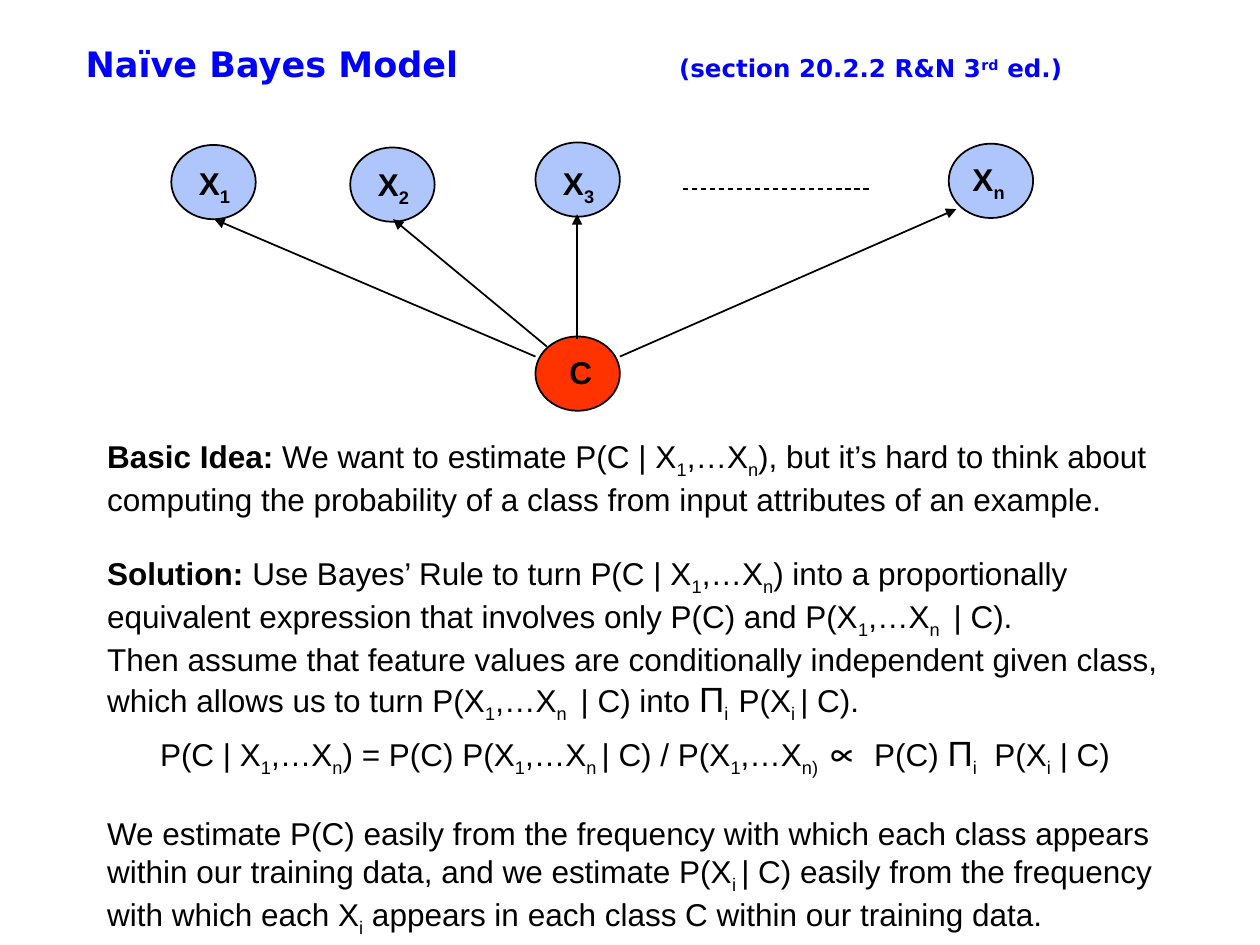
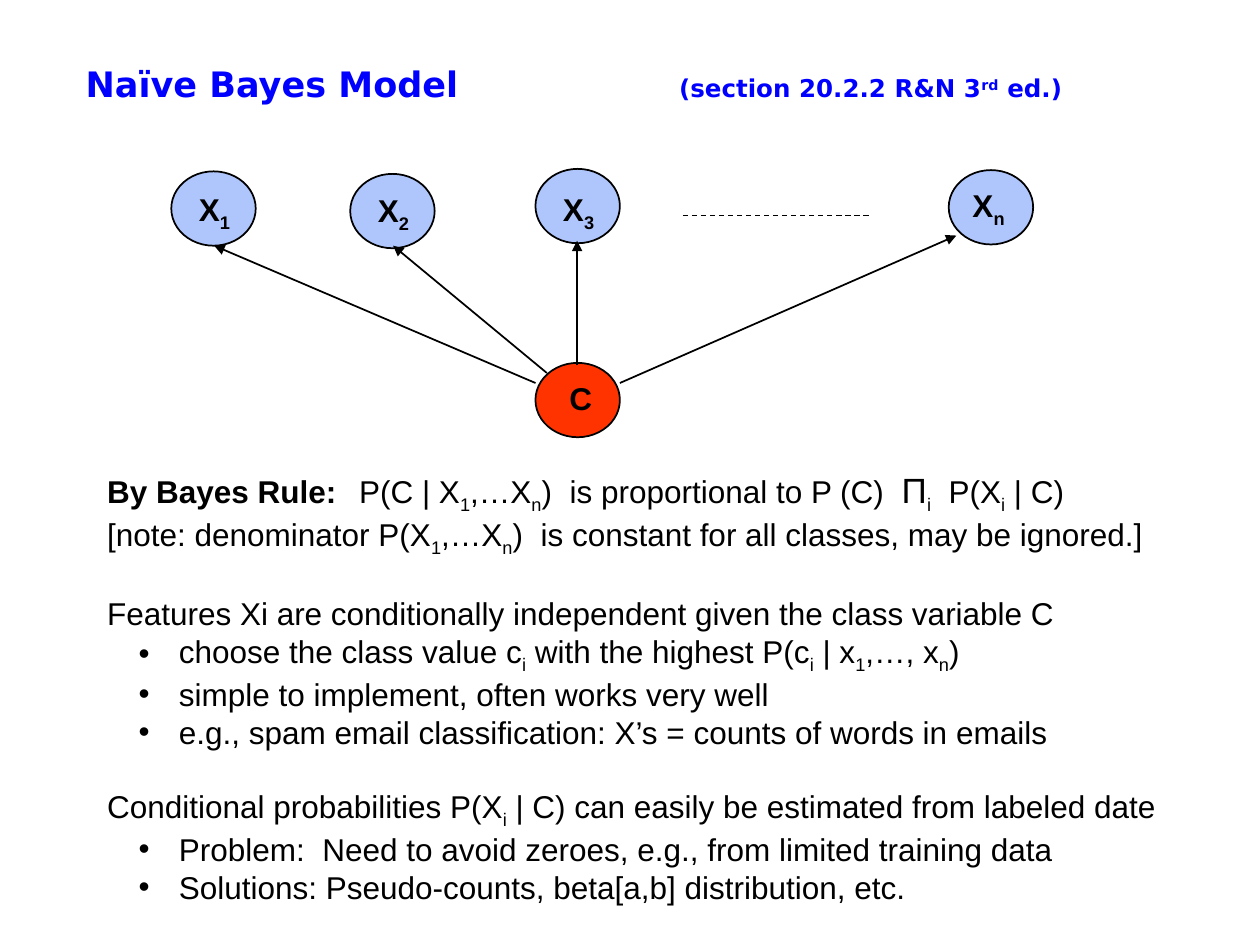
"""Build two slides that explain the naïve Bayes model."""
import itertools
from dataclasses import dataclass
from typing import Optional

import pptx
import pptx.dml.color
import pptx.enum.dml
import pptx.enum.shapes
import pptx.enum.text
import pptx.oxml
import pptx.oxml.ns
import pptx.util
from pptx.util import Inches, Pt

COLORS = {"title": "0000FF", "text": "000000", "class": "FF3300", "feature": "618FFD"}
TITLE_FONT, BODY_FONT = "DejaVu Sans", "Arial"
SYMBOL_SIZES = {"Π": 20, "∝": 24}
TEXT_SIZE = 18
BLANK_LINE = 20.7
NODE_W, NODE_H = 0.67, 0.59
SUBSCRIPT, SUPERSCRIPT = -25, 30


@dataclass(frozen=True)
class Node:
    letter: str
    left: float
    top: float
    label_left: float
    label_top: float
    kind: str = "feature"


@dataclass(frozen=True)
class Link:
    x1: float
    y1: float
    x2: float
    y2: float
    width: float = 1
    arrow: bool = True


@dataclass(frozen=True)
class Para:
    text: str
    lead: str = ""
    gap: bool = False
    bullet: bool = False
    indent: float = 0
    tab: Optional[float] = None


@dataclass(frozen=True)
class Page:
    title_top: float
    diagram_shift: float
    body_top: float
    body_height: float
    paras: tuple[Para, ...]


NODES = (
    Node("C", 4.25, 2.67, 4.42, 2.75, "class"),
    Node("X{n}", 7.53, 1.14, 7.62, 1.22),
    Node("X{1}", 1.36, 1.15, 1.48, 1.25),
    Node("X{2}", 2.78, 1.17, 2.9, 1.26),
    Node("X{3}", 4.25, 1.13, 4.37, 1.25),
)
LINKS = (
    Link(4.25, 2.83, 1.7, 1.74),
    Link(4.34, 2.75, 3.12, 1.74),
    Link(4.58, 2.69, 4.58, 1.7),
    Link(4.92, 2.83, 7.59, 1.66),
    Link(5.42, 1.5, 6.92, 1.5, 0.75, False),
)
PAGES = (
    Page(0.17, 0, 3.42, 3.87, (
        Para("We want to estimate P(C | X{1},…X{n}), but it’s hard to think about computing "
             "the probability of a class from input attributes of an example.", "Basic Idea: "),
        Para("Use Bayes’ Rule to turn P(C | X{1},…X{n}) into a proportionally equivalent "
             "expression that involves only P(C) and P(X{1},…X{n } | C).", "Solution: ", gap=True),
        Para("Then assume that feature values are conditionally independent given class, "
             "which allows us to turn P(X{1},…X{n } | C) into Π{i  }P(X{i }| C)."),
        Para("P(C | X{1},…X{n}) = P(C) P(X{1},…X{n }| C) / P(X{1},…X{n) }∝ P(C) Π{i}  P(X{i} | C)",
             indent=0.42),
        Para("We estimate P(C) easily from the frequency with which each class appears within "
             "our training data, and we estimate P(X{i }| C) easily from the frequency with "
             "which each X{i} appears in each class C within our training data.", gap=True),
    )),
    Page(0.33, 0.21, 3.67, 3.47, (
        Para("\tP(C | X{1},…X{n})  is proportional to P (C)  Π{i}  P(X{i} | C)",
             "By Bayes Rule:", tab=2.1),
        Para("[note: denominator P(X{1},…X{n})  is constant for all classes, may be ignored.]"),
        Para("Features Xi are conditionally independent given the class variable C", gap=True),
        Para("choose the class value c{i} with the highest P(c{i} | x{1},…, x{n})", bullet=True),
        Para("simple to implement, often works very well", bullet=True),
        Para("e.g., spam email classification: X’s = counts of words in emails", bullet=True),
        Para("Conditional probabilities P(X{i} | C) can easily be estimated from labeled date",
             gap=True),
        Para("Problem:  Need to avoid zeroes, e.g., from limited training data", bullet=True),
        Para("Solutions: Pseudo-counts, beta[a,b] distribution, etc.", bullet=True),
    )),
)


def rgb(name: str) -> pptx.dml.color.RGBColor:
    return pptx.dml.color.RGBColor.from_string(COLORS[name])


def append_xml(parent, tag: str, **attrs: str):
    el = pptx.oxml.parse_xml(f"<a:{tag} {pptx.oxml.ns.nsdecls('a')}/>")
    for key, value in attrs.items():
        el.set(key, value)
    parent.append(el)
    return el


def add_run(p, text: str, size: float = TEXT_SIZE, bold: bool = False, base: int = 0,
            font: str = BODY_FONT, color: str = "text") -> None:
    r = p.add_run()
    r.text = text
    r.font.size, r.font.bold, r.font.name = Pt(size), bold, font
    r.font.color.rgb = rgb(color)
    if base:
        r._r.get_or_add_rPr().set("baseline", str(base * 1000))


def add_math(p, text: str, bold: bool = False) -> None:
    for i, part in enumerate(text.replace("}", "{").split("{")):
        base = SUBSCRIPT if i % 2 else 0
        for size, chars in itertools.groupby(part, lambda c: SYMBOL_SIZES.get(c, TEXT_SIZE)):
            add_run(p, "".join(chars), size, bold, base)


def add_tab_stop(p, position: float) -> None:
    tabs = append_xml(p._p.get_or_add_pPr(), "tabLst")
    append_xml(tabs, "tab", pos=str(Inches(position)), algn="l")


def place(sp, left: float, top: float, width: float, height: float) -> None:
    sp.left, sp.top = Inches(left), Inches(top)
    sp.width, sp.height = Inches(width), Inches(height)
    sp.text_frame.auto_size = pptx.enum.text.MSO_AUTO_SIZE.NONE


def fill_title(sp, top: float) -> None:
    place(sp, 0.58, top, 8.5, 0.67)
    tf = sp.text_frame
    tf.vertical_anchor = pptx.enum.text.MSO_ANCHOR.MIDDLE
    p = tf.paragraphs[0]
    p.alignment = pptx.enum.text.PP_ALIGN.LEFT
    add_tab_stop(p, 4.71)
    for text, size, base in (("Naïve Bayes Model\t", 20, 0), ("(section 20.2.2 R&N 3", 14, 0),
                             ("rd", 14, SUPERSCRIPT), (" ed.)", 14, 0)):
        add_run(p, text, size, True, base, TITLE_FONT, "title")


def add_node(slide, node: Node, shift: float) -> None:
    sp = slide.shapes.add_shape(
        pptx.enum.shapes.MSO_SHAPE.OVAL, Inches(node.left), Inches(node.top + shift),
        Inches(NODE_W), Inches(NODE_H))
    sp.shadow.inherit = False
    sp.fill.solid()
    sp.fill.fore_color.rgb = rgb(node.kind)
    if node.kind == "feature":
        color = sp._element.spPr.find(pptx.oxml.ns.qn("a:solidFill"))[0]
        append_xml(color, "alpha", val="50000")
    sp.line.color.rgb = rgb("text")
    sp.line.width = Pt(1)


def add_label(slide, node: Node, shift: float) -> None:
    width = 0.46 if "{" in node.letter else 0.38
    sp = slide.shapes.add_textbox(Inches(node.label_left), Inches(node.label_top + shift),
                                  Inches(width), Inches(0.4))
    sp.text_frame.word_wrap = False
    add_math(sp.text_frame.paragraphs[0], node.letter, True)


def add_link(slide, link: Link, shift: float) -> None:
    line = slide.shapes.add_connector(
        pptx.enum.shapes.MSO_CONNECTOR.STRAIGHT, Inches(link.x1), Inches(link.y1 + shift),
        Inches(link.x2), Inches(link.y2 + shift))
    line.line.color.rgb = rgb("text")
    line.line.width = Pt(link.width)
    if link.arrow:
        append_xml(line.line._get_or_add_ln(), "tailEnd", type="triangle")
    else:
        line.line.dash_style = pptx.enum.dml.MSO_LINE.DASH
    append_xml(line._element.spPr, "effectLst")


def fill_body(sp, page: Page) -> None:
    place(sp, 0.75, page.body_top, 8.54, page.body_height)
    tf = sp.text_frame
    tf.word_wrap = True
    for i, para in enumerate(page.paras):
        p = tf.add_paragraph() if i else tf.paragraphs[0]
        p.level = 1 if para.bullet else 0
        p.space_before = Pt(BLANK_LINE if para.gap else 0)
        pPr = p._p.get_or_add_pPr()
        pPr.set("marL", str(Inches(0.57 if para.bullet else para.indent)))
        pPr.set("indent", str(Inches(-0.32 if para.bullet else 0)))
        if para.bullet:
            append_xml(pPr, "buFont", typeface=BODY_FONT)
            append_xml(pPr, "buChar", char="•")
        else:
            append_xml(pPr, "buNone")
        if para.tab:
            add_tab_stop(p, para.tab)
        if para.lead:
            add_run(p, para.lead, bold=True)
        add_math(p, para.text)


def add_page(prs, page: Page) -> None:
    slide = prs.slides.add_slide(prs.slide_layouts[1])
    fill_title(slide.shapes.title, page.title_top)
    for node in NODES:
        add_node(slide, node, page.diagram_shift)
    for link in LINKS:
        add_link(slide, link, page.diagram_shift)
    for node in NODES:
        add_label(slide, node, page.diagram_shift)
    fill_body(slide.placeholders[1], page)


def main() -> None:
    prs = pptx.Presentation()
    prs.slide_width, prs.slide_height = Inches(10), Inches(7.5)
    for page in PAGES:
        add_page(prs, page)
    prs.save("out.pptx")


if __name__ == "__main__":
    main()
